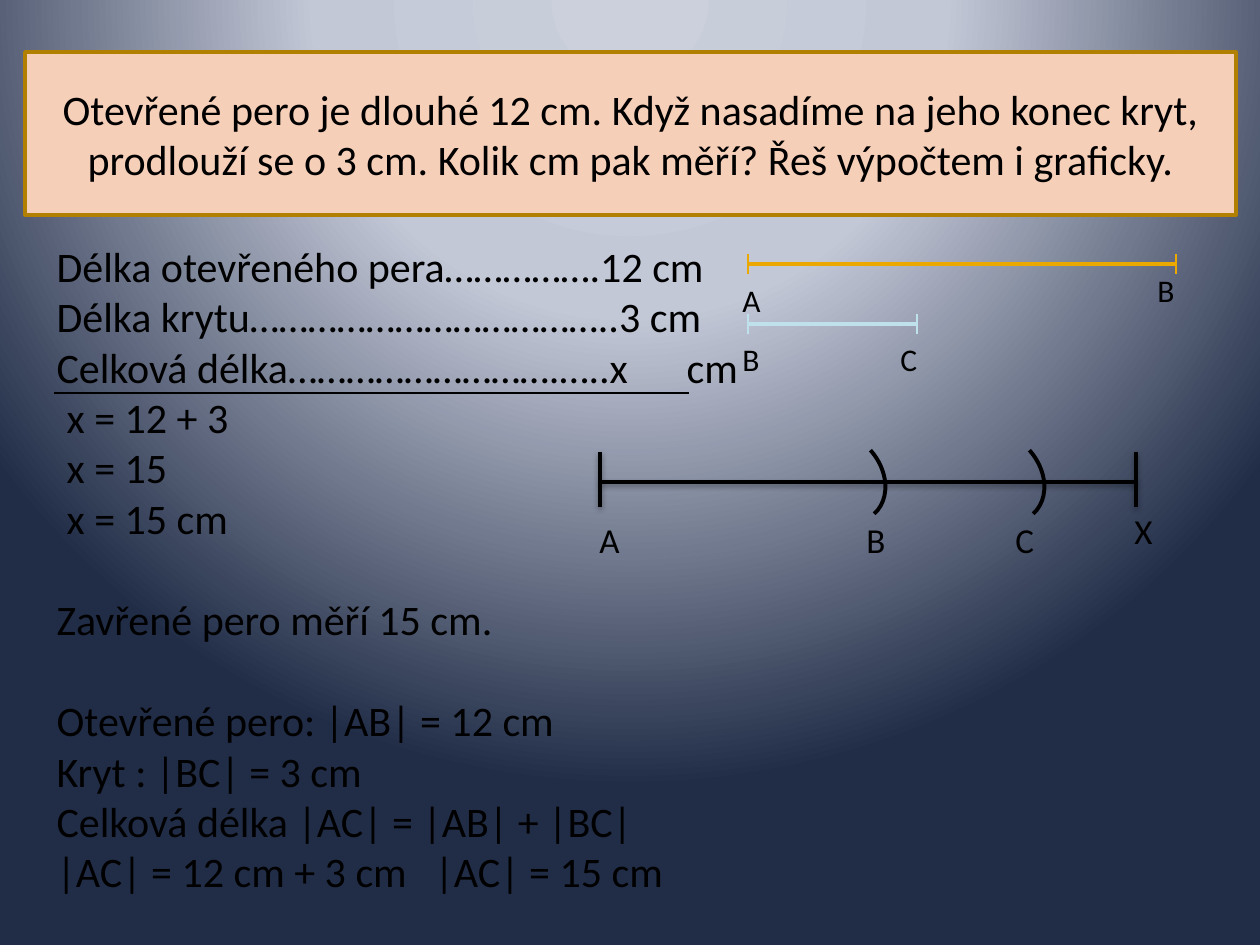
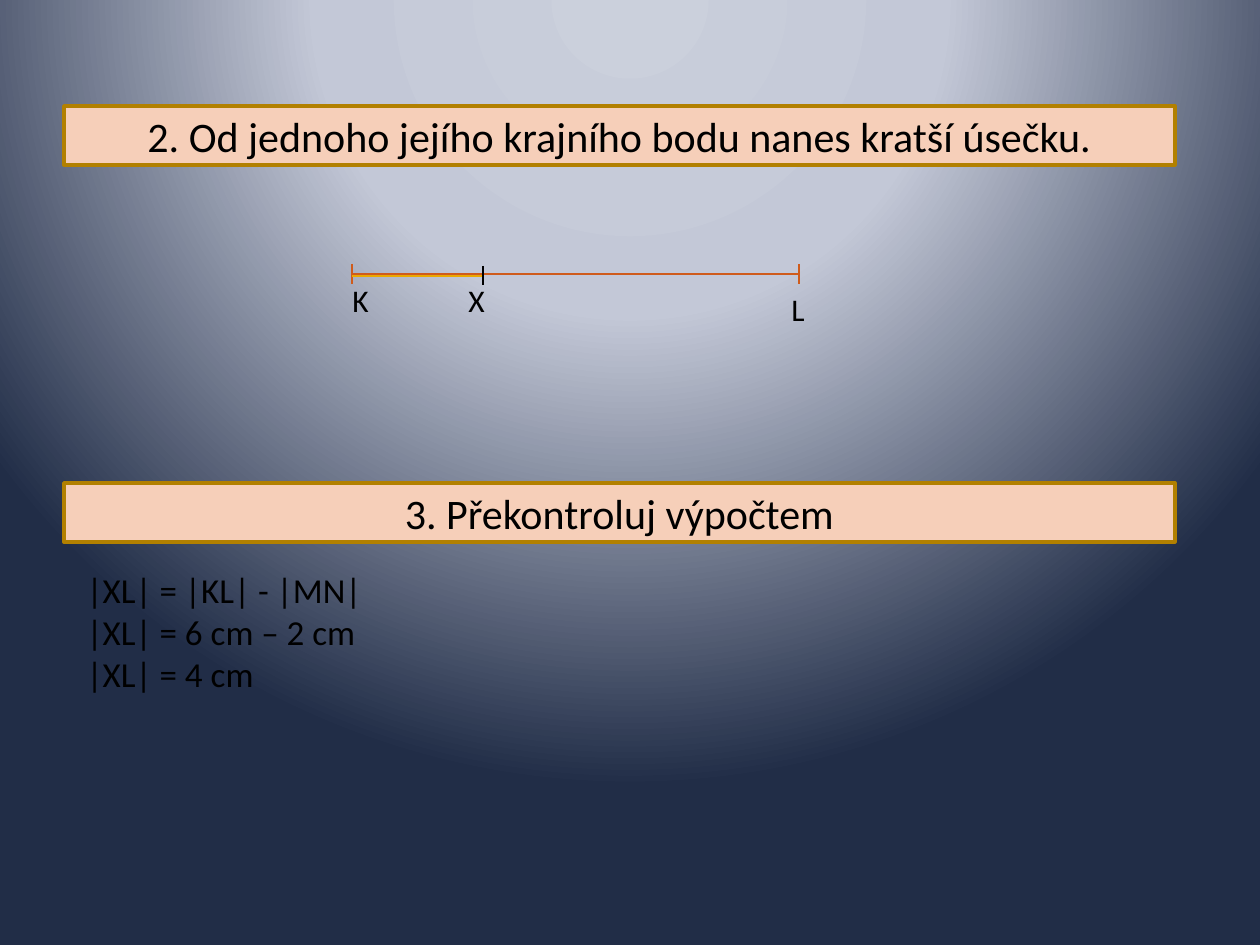
from lxml.etree import SubElement
from pptx import Presentation
from pptx.dml.color import RGBColor
from pptx.enum.shapes import MSO_CONNECTOR, MSO_SHAPE
from pptx.enum.text import MSO_ANCHOR, MSO_AUTO_SIZE, PP_ALIGN
from pptx.oxml import parse_xml
from pptx.oxml.ns import nsdecls, qn
from pptx.util import Emu, Pt

PX = 914400 / 126
FONT = "Calibri"
BLACK, PEACH, GOLD = "000000", "F6CFB9", "B28000"
YELLOW, PALE_BLUE, ORANGE = "EBA900", "BFE1EB", "CF5B1B"
color = RGBColor.from_string


def draw_line(page, x1, y1, x2, y2, stroke, width, shadow=False):
    ends = [Emu(round(value * PX)) for value in (x1, y1, x2, y2)]
    line = page.shapes.add_connector(MSO_CONNECTOR.STRAIGHT, *ends)
    line.line.color.rgb = color(stroke)
    line.line.width = Pt(width)
    effects = SubElement(line._element.spPr, qn("a:effectLst"))
    if shadow:
        effects.append(parse_xml(
            f'<a:outerShdw {nsdecls("a")} blurRad="{Pt(3.1)}" dist="{Pt(1.6)}" dir="5400000" '
            'rotWithShape="0"><a:srgbClr val="000000"><a:alpha val="38000"/></a:srgbClr></a:outerShdw>'))


def add_label(page, text, x, y, size):
    box = page.shapes.add_textbox(*[Emu(round(value * PX)) for value in (x, y, 49, 52)])
    box.text_frame.word_wrap = True
    para = box.text_frame.paragraphs[0]
    para.text = text
    para.font.name, para.font.size = FONT, Pt(size)
    para.font.color.rgb = color(BLACK)


deck = Presentation()
deck.slide_width, deck.slide_height = round(1260 * PX), round(945 * PX)

# Shared background: a radial gradient on the master
deck.slide_master.background.fill.solid()
background = deck.slide_master._element.cSld.find(qn("p:bg")).find(qn("p:bgPr"))
stops = "".join(
    f'<a:gs pos="{position * 1000}"><a:srgbClr val="{shade}"/></a:gs>'
    for position, shade in ((0, "CBD0DC"), (40, "C3C8D7"), (100, "212D47")))
background.replace(background[0], parse_xml(
    f'<a:gradFill {nsdecls("a")} rotWithShape="1"><a:gsLst>{stops}</a:gsLst><a:path path="circle">'
    '<a:fillToRect l="50000" t="-80000" r="50000" b="180000"/></a:path></a:gradFill>'))

# Solution lines: text, indent px, space before pt, tab stop px
pen_lines = [
    ("Délka otevřeného pera…………….12 cm", 0, 0, 0),
    ("Délka krytu………………………………..3 cm", 0, 0, 0),
    ("Celková délka……………………….…..x\tcm", 0, 0, 591),
    ("x = 12 + 3", 10, 0, 0),
    ("x = 15", 10, 0, 0),
    ("x = 15 cm", 10, 0, 0),
    ("Zavřené pero měří 15 cm.", 0, 29, 0),
    ("Otevřené pero: |AB| = 12 cm", 0, 29, 0),
    ("Kryt : |BC| = 3 cm", 0, 0, 0),
    ("Celková délka |AC| = |AB| + |BC|", 0, 0, 0),
    ("|AC| = 12 cm + 3 cm\t|AC| = 15 cm", 0, 0, 392),
]
check_lines = [
    ("|XL| = |KL| - |MN|", 0, 0, 0),
    ("|XL| = 6 cm – 2 cm", 0, 0, 0),
    ("|XL| = 4 cm", 0, 0, 0),
]
contents = [
    ("Otevřené pero je dlouhé 12 cm. Když nasadíme na jeho konec kryt, "
     "prodlouží se o 3 cm. Kolik cm pak měří? Řeš výpočtem i graficky.",
     (25, 52, 1211, 163), pen_lines, (44, 234, 1191, 674), 24),
    ("2. Od jednoho jejího krajního bodu nanes kratší úsečku.",
     (64, 106, 1111, 59), check_lines, (74, 562, 903, 140), 20),
]

# Titles and solutions in the template's placeholders
pages, bands = [], []
for title, title_area, lines, body_area, size in contents:
    page = deck.slides.add_slide(deck.slide_layouts[1])
    pages.append(page)
    bands.append((page.shapes.title, title, title_area))
    body = page.placeholders[1]
    body.left, body.top, body.width, body.height = [round(value * PX) for value in body_area]
    frame = body.text_frame
    frame.auto_size = MSO_AUTO_SIZE.NONE
    for index, (text, indent, gap, tab) in enumerate(lines):
        para = frame.paragraphs[0] if index == 0 else frame.add_paragraph()
        para.text = text
        para.space_before = Pt(gap)
        para.font.name, para.font.size = FONT, Pt(size)
        para.font.color.rgb = color(BLACK)
        settings = para._p.get_or_add_pPr()
        settings.set("marL", str(round(indent * PX)))
        settings.set("indent", "0")
        bullet = parse_xml(f'<a:buNone {nsdecls("a")}/>')
        settings.find(qn("a:spcBef")).addnext(bullet)
        if tab:
            bullet.addnext(parse_xml(
                f'<a:tabLst {nsdecls("a")}><a:tab pos="{round(tab * PX)}" algn="l"/></a:tabLst>'))
pen_page, segment_page = pages

# Peach bands: both titles and the third step
check_band = segment_page.shapes.add_shape(MSO_SHAPE.RECTANGLE, 0, 0, 0, 0)
check_band.shadow.inherit = False
bands.append((check_band, "3. Překontroluj výpočtem", (64, 483, 1111, 59)))
for band, text, area in bands:
    band.left, band.top, band.width, band.height = [round(value * PX) for value in area]
    band.fill.solid()
    band.fill.fore_color.rgb = color(PEACH)
    band.line.color.rgb = color(GOLD)
    band.line.width = Pt(2)
    frame = band.text_frame
    frame.auto_size = MSO_AUTO_SIZE.NONE
    frame.word_wrap = True
    frame.vertical_anchor = MSO_ANCHOR.MIDDLE
    para = frame.paragraphs[0]
    para.text = text
    para.alignment = PP_ALIGN.CENTER
    para.font.name, para.font.size = FONT, Pt(24)
    para.font.color.rgb = color(BLACK)

# Rule under the given lengths
draw_line(pen_page, 54, 393, 689, 393, BLACK, 0.75)

# Segments with end ticks: page, left, right, y, tick rise, tick drop, colour, widths, shadow
segments = [
    (pen_page, 600, 1136, 482, 30, 25, BLACK, 2, 2, True),
    (pen_page, 748, 1176, 264, 10, 10, YELLOW, 2.25, 0.75, False),
    (pen_page, 748, 917, 324, 10, 10, PALE_BLUE, 2.25, 0.75, False),
    (segment_page, 352, 799, 274, 10, 10, ORANGE, 1.5, 1, False),
]
for page, left, right, y, rise, drop, stroke, width, tick_width, shadow in segments:
    draw_line(page, left, y, right, y, stroke, width, shadow)
    for x in (left, right):
        draw_line(page, x, y - rise, x, y + drop, stroke, tick_width, shadow)

# Shorter segment laid onto the longer one
draw_line(segment_page, 352, 276, 483, 276, YELLOW, 1.5)
draw_line(segment_page, 483, 266, 483, 285, BLACK, 0.75)

# Compass arcs at B and C
for left in (791, 950):
    arc = pen_page.shapes.add_shape(
        MSO_SHAPE.ARC, *[Emu(round(value * PX)) for value in (left, 437, 100, 79)])
    arc.rotation = 48.3
    arc.shadow.inherit = False
    arc.fill.background()
    arc.line.color.rgb = color(BLACK)
    arc.line.width = Pt(2.25)

# Point labels
for page, text, x, y, size in [
    (pen_page, "A", 587, 512, 20),
    (pen_page, "B", 854, 512, 20),
    (pen_page, "C", 1003, 512, 20),
    (pen_page, "X", 1122, 503, 20),
    (pen_page, "A", 730, 275, 18),
    (pen_page, "B", 1145, 265, 18),
    (pen_page, "B", 730, 334, 18),
    (pen_page, "C", 888, 334, 18),
    (segment_page, "K", 340, 275, 18),
    (segment_page, "X", 456, 275, 18),
    (segment_page, "L", 779, 284, 18),
]:
    add_label(page, text, x, y, size)

deck.save("out.pptx")
